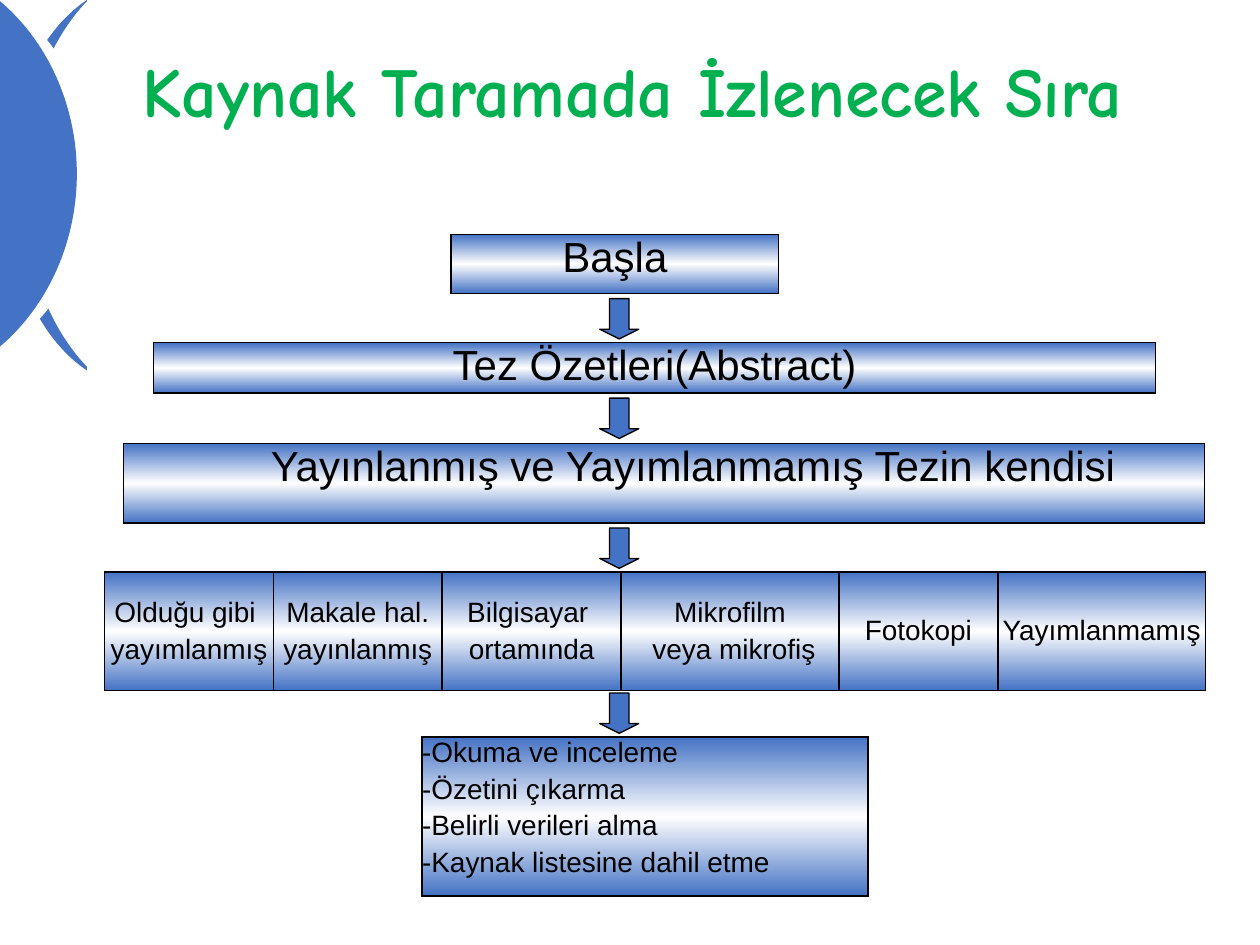
from lxml import etree
from pptx import Presentation
from pptx.dml.color import RGBColor
from pptx.enum import shapes, text
from pptx.oxml import ns
from pptx.util import Inches, Pt

BLUE, WHITE, BLACK, GREEN = "4472C4", "FFFFFF", "000000", "00B050"
MIDDLE, TOP = text.MSO_ANCHOR.MIDDLE, text.MSO_ANCHOR.TOP
CENTER, LEFT = text.PP_ALIGN.CENTER, text.PP_ALIGN.LEFT


def color(value):
    return RGBColor.from_string(value)


def write(frame, content, size, font="Arial", ink=BLACK, bold=False, align=CENTER, gap=3.2):
    for i, line in enumerate(content.split("\n")):
        paragraph = frame.paragraphs[0] if i == 0 else frame.add_paragraph()
        paragraph.alignment = align
        if i:
            paragraph.space_before = Pt(gap)
        run = paragraph.add_run()
        run.text = line
        run.font.size, run.font.name, run.font.bold = Pt(size), font, bold
        run.font.color.rgb = color(ink)


prs = Presentation()
prs.slide_width, prs.slide_height = Inches(10), Inches(7.5)
slide = prs.slides.add_slide(prs.slide_layouts[5])

# Corner arcs: upper half of each curve (end, two handles, tip), mirrored below the tip
arcs = [
    ([(0.69, 0), (0.3, 0.26), (0.05, 0.83), (0.05, 1.47)], BLUE),
    ([(0.7, 0), (0.37, 0.34), (0.18, 0.88), (0.18, 1.46)], WHITE),
    ([(0, 0), (0.45, 0.25), (0.74, 0.8), (0.74, 1.39)], WHITE),
    ([(0, 0.01), (0.38, 0.33), (0.61, 0.84), (0.61, 1.38)], BLUE),
]
for upper, fill in arcs:
    tip = upper[-1][1]
    lower = [(x, 2 * tip - y) for x, y in reversed(upper[:-1])]
    points = [(Inches(x), Inches(y)) for x, y in upper + lower]
    builder = slide.shapes.build_freeform(*points[0])
    builder.add_line_segments(points[1:], close=True)
    arc = builder.convert_to_shape()
    # Turn each three line segments into one Bézier curve
    segments = list(arc._element.iter(ns.qn("a:lnTo")))
    for start in (0, 3):
        curve = etree.Element(ns.qn("a:cubicBezTo"))
        segments[start].addprevious(curve)
        for segment in segments[start:start + 3]:
            curve.append(segment[0])
            segment.getparent().remove(segment)
    arc.shadow.inherit = False
    arc.fill.solid()
    arc.fill.fore_color.rgb = color(fill)
    arc.line.fill.background()

# Title
title = slide.shapes.title
title.left, title.top, title.width, title.height = map(Inches, (0.75, 0.13, 9, 1.25))
title.text_frame.vertical_anchor = MIDDLE
title.text_frame.margin_right = Inches(0.56)
write(title.text_frame, "Kaynak Taramada İzlenecek Sıra", 40, font="Comic Neue",
      ink=GREEN, bold=True)
title.text_frame.paragraphs[0].line_spacing = 0.9

# Steps: left, top, height, column widths, texts, size, alignment, anchor, indent
steps = [
    (3.58, 1.86, 0.47, [2.6], ["Başla"], 24, CENTER, TOP, 0),
    (1.22, 2.72, 0.4, [7.95], ["Tez Özetleri(Abstract)"], 24, CENTER, TOP, 0),
    (0.98, 3.52, 0.63, [8.58], ["Yayınlanmış ve Yayımlanmamış Tezin kendisi"],
     24, CENTER, TOP, 0.46),
    (0.83, 4.54, 0.94, [1.34, 1.34, 1.42, 1.73, 1.26, 1.65],
     ["Olduğu gibi \nyayımlanmış", "Makale hal.\nyayınlanmış", "Bilgisayar \nortamında",
      "Mikrofilm\n veya mikrofiş", "Fotokopi", "Yayımlanmamış"], 16, CENTER, MIDDLE, 0),
    (3.35, 5.85, 1.26, [3.54],
     ["-Okuma ve inceleme\n-Özetini çıkarma\n-Belirli verileri alma\n"
      "-Kaynak listesine dahil etme"], 16, LEFT, TOP, 0),
]
for left, top, height, widths, labels, size, align, anchor, indent in steps:
    table = slide.shapes.add_table(1, len(widths), Inches(left), Inches(top),
                                   Inches(sum(widths)), Inches(height)).table
    table.first_row = table.horz_banding = False
    for column, width, cell, label in zip(table.columns, widths, table.rows[0].cells, labels):
        column.width = Inches(width)
        cell.margin_left = Inches(indent)
        cell.margin_right = cell.margin_top = cell.margin_bottom = 0
        cell.vertical_anchor = anchor
        write(cell.text_frame, label, size, align=align)

        # Black borders, then the blue-white-blue gradient
        props = cell._tc.get_or_add_tcPr()
        for border in ("a:lnL", "a:lnR", "a:lnT", "a:lnB"):
            line = etree.SubElement(props, ns.qn(border), w=str(Pt(1)))
            solid = etree.SubElement(line, ns.qn("a:solidFill"))
            etree.SubElement(solid, ns.qn("a:srgbClr"), val=BLACK)
        gradient = etree.SubElement(props, ns.qn("a:gradFill"), rotWithShape="1")
        stops = etree.SubElement(gradient, ns.qn("a:gsLst"))
        for position, tone in ((0, BLUE), (50, WHITE), (100, BLUE)):
            stop = etree.SubElement(stops, ns.qn("a:gs"), pos=str(position * 1000))
            etree.SubElement(stop, ns.qn("a:srgbClr"), val=tone)
        etree.SubElement(gradient, ns.qn("a:lin"), ang="5400000", scaled="1")

# Arrows between the steps
for top in (2.37, 3.16, 4.19, 5.5):
    arrow = slide.shapes.add_shape(shapes.MSO_SHAPE.DOWN_ARROW, Inches(4.76), Inches(top),
                                   Inches(0.31), Inches(0.32))
    arrow.adjustments[0], arrow.adjustments[1] = 0.5, 0.25
    arrow.shadow.inherit = False
    arrow.fill.solid()
    arrow.fill.fore_color.rgb = color(BLUE)
    arrow.line.color.rgb = color(BLACK)
    arrow.line.width = Pt(0.75)

prs.save("out.pptx")
